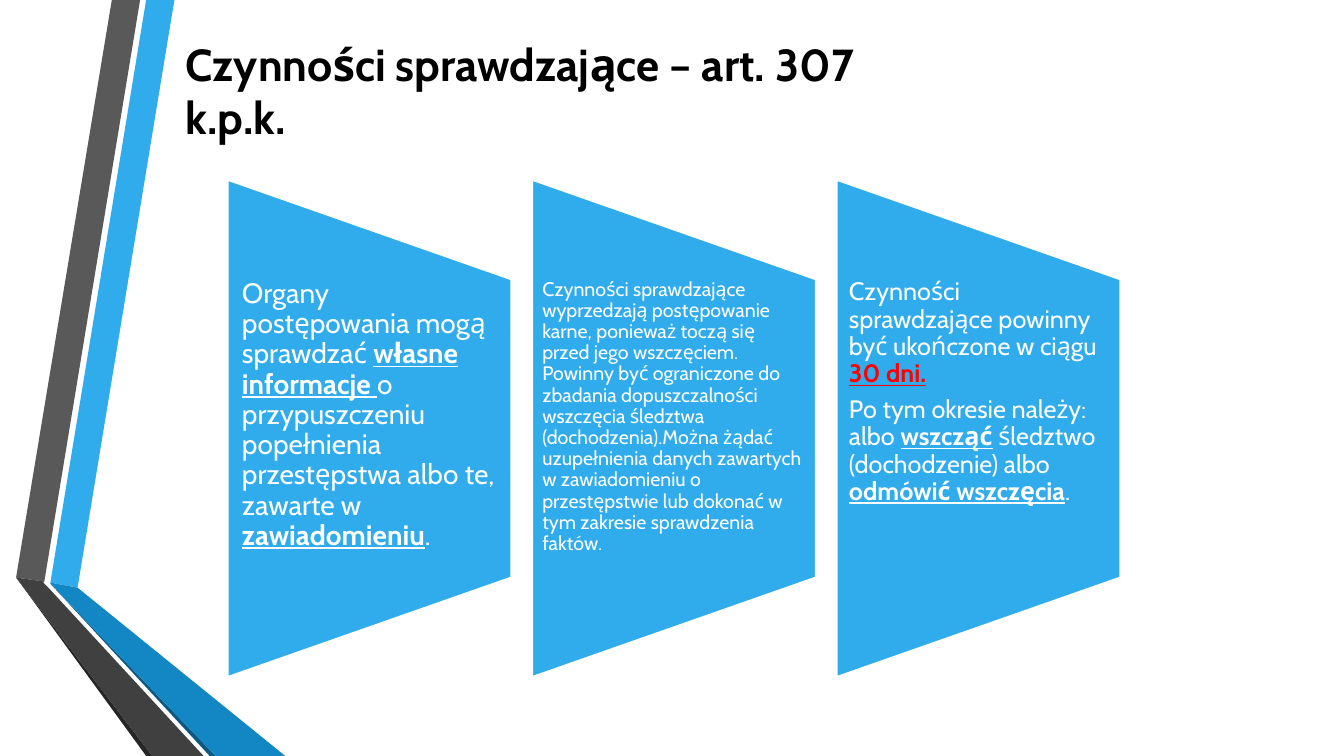
"""Build the slide on verification activities under art. 307 k.p.k."""
from dataclasses import dataclass
from typing import Optional

from pptx import Presentation
from pptx.dml.color import RGBColor
from pptx.enum.shapes import MSO_SHAPE as Shp
from pptx.enum.text import MSO_ANCHOR as Anchor, MSO_AUTO_SIZE as AutoSize, PP_ALIGN as Align
from pptx.slide import Slide
from pptx.util import Emu, Pt

PX = 9144
FONT = "Cabin"
COLORS = {
    "black": "000000",
    "white": "FFFFFF",
    "red": "FF0000",
    "blue": "30ACEC",
    "mid_blue": "1287C3",
    "deep_blue": "0C5A82",
    "gray": "595959",
    "dark_gray": "404040",
    "shadow_gray": "262626",
}
PANEL_LEFT, PANEL_STEP = 226, 302
PANEL_W, PANEL_H = 281, 493
PANEL_MID_Y = 425
TEXT_TOP, TEXT_H = 277, 296


@dataclass(frozen=True)
class Ribbon:
    """A coloured polygon of the left-hand decoration."""
    color: str
    points: tuple[tuple[int, int], ...]


@dataclass(frozen=True)
class Span:
    """A piece of text, optionally emphasised with bold and underline."""
    text: str
    strong: bool = False
    color: str = "white"


@dataclass(frozen=True)
class Panel:
    """A trapezoid panel with its text size, side inset and paragraphs."""
    size: int
    inset: int
    paragraphs: tuple[tuple[Span, ...], ...]


RIBBONS = (
    Ribbon("blue", ((50, 578), (77, 583), (173, 0), (145, 0))),
    Ribbon("gray", ((139, 0), (111, 0), (16, 573), (44, 577))),
    Ribbon("shadow_gray", ((16, 573), (145, 750), (151, 750))),
    Ribbon("deep_blue", ((50, 579), (208, 750), (214, 750))),
    Ribbon("mid_blue", ((50, 578), (50, 579), (214, 750), (283, 750), (77, 583))),
    Ribbon("dark_gray", ((202, 750), (48, 583), (43, 578), (44, 577), (16, 573), (151, 750))),
)

PANELS = (
    Panel(20, 14, ((
        Span("Organy postępowania mogą sprawdzać "),
        Span("własne informacje ", True),
        Span("o przypuszczeniu popełnienia przestępstwa albo te, zawarte w "),
        Span("zawiadomieniu", True),
        Span("."),
    ),)),
    Panel(14, 10, ((
        Span("Czynności sprawdzające wyprzedzają postępowanie karne, ponieważ toczą się "
             "przed jego wszczęciem. Powinny być ograniczone do zbadania dopuszczalności "
             "wszczęcia śledztwa (dochodzenia).Można żądać uzupełnienia danych zawartych "
             "w zawiadomieniu o przestępstwie lub dokonać w tym zakresie sprawdzenia faktów."),
    ),)),
    Panel(18, 12, (
        (
            Span("Czynności sprawdzające powinny być ukończone w ciągu "),
            Span("30 dni.", True, "red"),
        ),
        (
            Span("Po tym okresie należy: albo "),
            Span("wszcząć", True),
            Span(" śledztwo (dochodzenie) albo "),
            Span("odmówić wszczęcia", True),
            Span("."),
        ),
    )),
)


def px(n: float) -> Emu:
    """Convert px to EMU."""
    return Emu(int(n * PX))


def rgb(name: str) -> RGBColor:
    """Look up a named colour."""
    return RGBColor.from_string(COLORS[name])


def style_font(font, size: int, color: str, bold: bool, underline: Optional[bool] = None) -> None:
    """Apply the slide typeface with the given look."""
    font.name = FONT
    font.size = Pt(size)
    font.bold = bold
    font.underline = underline
    font.color.rgb = rgb(color)


def add_ribbon(s: Slide, ribbon: Ribbon) -> None:
    """Draw one decoration polygon."""
    start, *rest = ribbon.points
    fb = s.shapes.build_freeform(*start, scale=PX)
    fb.add_line_segments(rest, close=True)
    sp = fb.convert_to_shape()
    sp.shadow.inherit = False
    sp.fill.solid()
    sp.fill.fore_color.rgb = rgb(ribbon.color)
    sp.line.fill.background()


def add_panel(s: Slide, panel: Panel, left: int) -> None:
    """Draw one trapezoid and the text box above it."""
    sp = s.shapes.add_shape(
        Shp.FLOWCHART_MANUAL_OPERATION,
        px(left + (PANEL_W - PANEL_H) / 2), px(PANEL_MID_Y - PANEL_W / 2),
        px(PANEL_H), px(PANEL_W))
    sp.rotation = 270
    sp.shadow.inherit = False
    sp.fill.solid()
    sp.fill.fore_color.rgb = rgb("blue")
    sp.line.color.rgb = rgb("white")
    sp.line.width = Pt(1.25)

    tf = s.shapes.add_textbox(px(left), px(TEXT_TOP), px(PANEL_W), px(TEXT_H)).text_frame
    tf.word_wrap = True
    tf.vertical_anchor = Anchor.TOP
    tf.margin_left = tf.margin_right = px(panel.inset)
    tf.margin_top = tf.margin_bottom = 0
    for i, spans in enumerate(panel.paragraphs):
        p = tf.add_paragraph() if i else tf.paragraphs[0]
        p.line_spacing = 0.9
        p.space_after = Pt(panel.size * 0.35)
        for span in spans:
            r = p.add_run()
            r.text = span.text
            style_font(r.font, panel.size, span.color, span.strong, span.strong)


def set_title(s: Slide, text: str) -> None:
    """Place and format the title placeholder."""
    sp = s.shapes.title
    sp.left, sp.top, sp.width, sp.height = px(174), px(31), px(713), px(118)
    tf = sp.text_frame
    tf.text = text
    tf.word_wrap = True
    tf.auto_size = AutoSize.NONE
    tf.vertical_anchor = Anchor.TOP
    p = tf.paragraphs[0]
    p.alignment = Align.LEFT
    style_font(p.runs[0].font, 32, "black", True)


def main() -> None:
    """Create and save the presentation."""
    prs = Presentation()
    prs.slide_width, prs.slide_height = px(1333), px(750)
    s = prs.slides.add_slide(prs.slide_layouts[5])
    for ribbon in RIBBONS:
        add_ribbon(s, ribbon)
    for i, panel in enumerate(PANELS):
        add_panel(s, panel, PANEL_LEFT + i * PANEL_STEP)
    set_title(s, "Czynności sprawdzające – art. 307 k.p.k.")
    prs.save("out.pptx")


if __name__ == "__main__":
    main()
